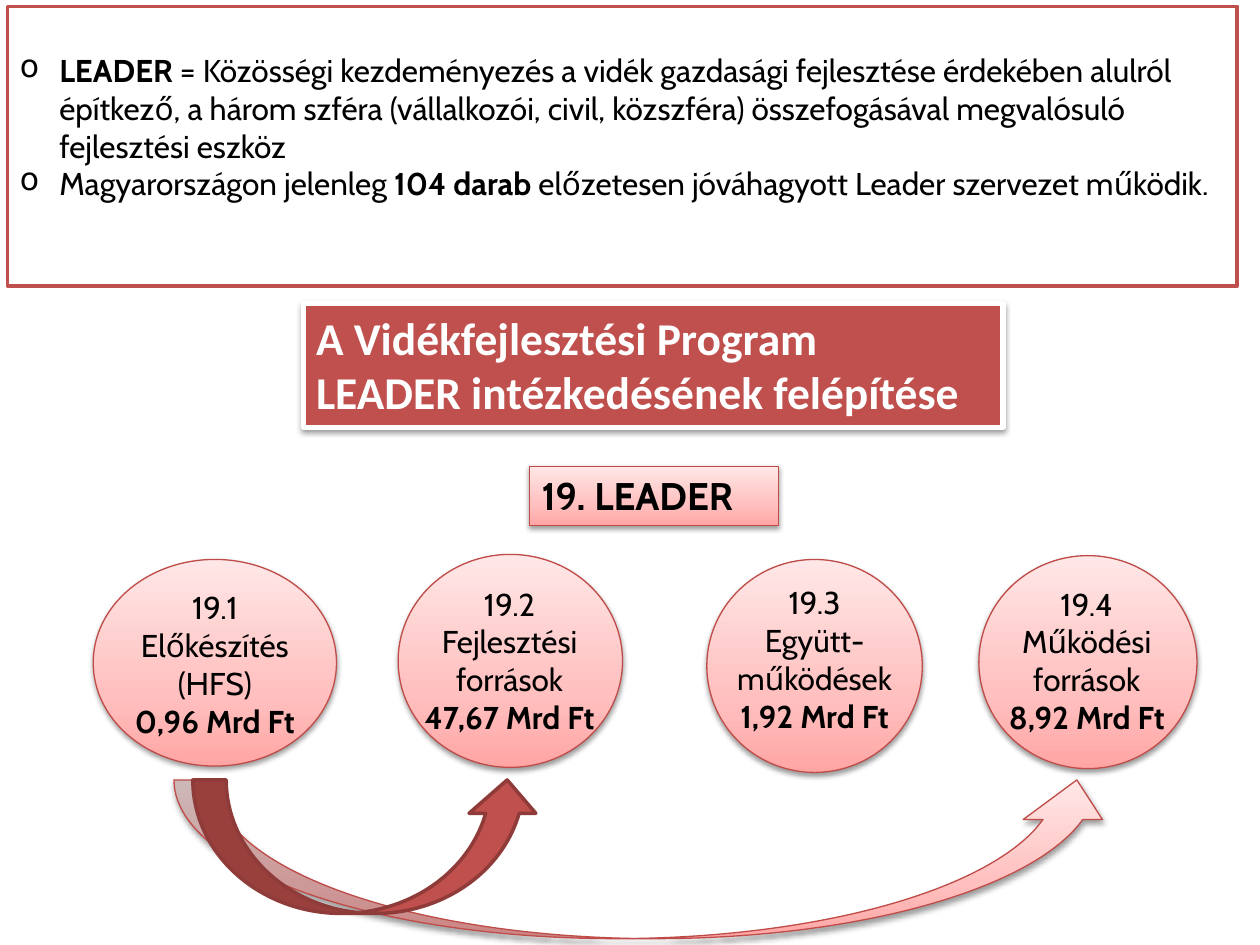
from lxml import etree
from pptx import Presentation
from pptx.dml.color import RGBColor
from pptx.enum.shapes import MSO_SHAPE
from pptx.enum.text import MSO_ANCHOR, PP_ALIGN
from pptx.oxml.ns import qn
from pptx.util import Pt

RECT, OVAL, ARROW = MSO_SHAPE.RECTANGLE, MSO_SHAPE.OVAL, MSO_SHAPE.CURVED_UP_ARROW
LEFT, MID = PP_ALIGN.LEFT, PP_ALIGN.CENTER
TOP, CENTER = MSO_ANCHOR.TOP, MSO_ANCHOR.MIDDLE

HUE = {"red": "C0504D", "edge": "BF4C48", "dark": "8E3B39",
       "white": "FFFFFF", "black": "000000"}
FADE = [(0, "FFA6A5"), (35, "FFC0BF"), (100, "FFE7E7")]

TITLE = [[("A Vidékfejlesztési Program", True)],
         [("LEADER intézkedésének felépítése", True)]]
HEAD = [[("19. LEADER", True)]]
INTRO = [
    [("LEADER", True),
     (" = Közösségi kezdeményezés a vidék gazdasági fejlesztése érdekében alulról "
      "építkező, a három szféra (vállalkozói, civil, közszféra) összefogásával "
      "megvalósuló fejlesztési eszköz", False)],
    [("Magyarországon jelenleg ", False), ("104 darab ", True),
     ("előzetesen jóváhagyott Leader szervezet működik.", False)],
]
PARTS = [
    (["19.1", "Előkészítés", "(HFS)"], "0,96 Mrd Ft",
     (53.3, 319.7, 139, 118.1), (67.7, 332.6, 110.2, 94.3)),
    (["19.2", "Fejlesztési", "források"], "47,67 Mrd Ft",
     (227.5, 316.8, 128.2, 121.7), (231.1, 330.5, 120.2, 94.3)),
    (["19.3", "Együtt-", "működések"], "1,92 Mrd Ft",
     (403.9, 319.7, 123.1, 121.7), (410.4, 329.8, 110.2, 94.3)),
    (["19.4", "Működési", "források"], "8,92 Mrd Ft",
     (559.4, 317.5, 124.6, 121.7), (565.9, 330.5, 110.2, 94.3)),
]


def rgb(name):
    return RGBColor.from_string(HUE[name])


def fade(shape):
    shape.fill.gradient()
    shape.fill.gradient_angle = 90
    stops = next(shape._element.iter(qn("a:gsLst")))
    for old in list(stops):
        stops.remove(old)
    for pos, tone in FADE:
        stop = etree.SubElement(stops, qn("a:gs"), pos=str(pos * 1000))
        etree.SubElement(stop, qn("a:srgbClr"), val=tone)


def shade(shape):
    glow = etree.SubElement(
        shape._element.spPr.find(qn("a:effectLst")), qn("a:outerShdw"),
        blurRad=str(Pt(3.1)), dist=str(Pt(1.6)), dir="5400000", rotWithShape="0")
    tone = etree.SubElement(glow, qn("a:srgbClr"), val=HUE["black"])
    etree.SubElement(tone, qn("a:alpha"), val="38000")


def draw(kind, box, fill=None, line="edge", width=0.75, cast=True):
    shape = slide.shapes.add_shape(kind, *map(Pt, box))
    shape.shadow.inherit = False
    if fill:
        shape.fill.solid()
        shape.fill.fore_color.rgb = rgb(fill)
    else:
        fade(shape)
    shape.line.color.rgb = rgb(line)
    shape.line.width = Pt(width)
    if cast:
        shade(shape)
    return shape


def write(shape, paras, size, font="Cabin", tone="black", align=LEFT,
          wrap=True, anchor=TOP):
    frame = shape.text_frame
    frame.word_wrap = wrap
    frame.vertical_anchor = anchor
    for i, runs in enumerate(paras):
        para = frame.add_paragraph() if i else frame.paragraphs[0]
        para.alignment = align
        for text, bold in runs:
            run = para.add_run()
            run.text = text
            run.font.name = font
            run.font.size = Pt(size)
            run.font.bold = bold
            run.font.color.rgb = rgb(tone)
    return frame


def bullet(para):
    props = para._p.get_or_add_pPr()
    props.set("marL", str(Pt(22.5)))
    props.set("indent", str(Pt(-22.5)))
    etree.SubElement(props, qn("a:buChar"), char="o")


deck = Presentation()
deck.slide_width, deck.slide_height = Pt(720), Pt(540)
slide = deck.slides.add_slide(deck.slide_layouts[6])

title = draw(RECT, (173.5, 173.5, 399.6, 70.6), "red", "white", 3)
write(title, TITLE, 26, "Calibri", "white")
head = draw(RECT, (302.4, 266.4, 142.6, 33.8))
write(head, HEAD, 22, wrap=False)

for part in PARTS:
    draw(OVAL, part[2])
for lines, sum_, _, box in PARTS:
    label = slide.shapes.add_textbox(*map(Pt, box))
    rows = [[(text, False)] for text in lines] + [[(sum_, True)]]
    write(label, rows, 18, align=MID, wrap=False)

draw(ARROW, (99.4, 445.7, 538.6, 90.7))
draw(ARROW, (110.2, 445.7, 198.7, 76.3), "red", "dark", 2, False)

intro = draw(RECT, (4.3, 3.6, 702.7, 159.8), "white", "red", 2, False)
frame = write(intro, INTRO, 18)
frame.margin_top = Pt(25.5)
for para in frame.paragraphs:
    bullet(para)

deck.save("out.pptx")
